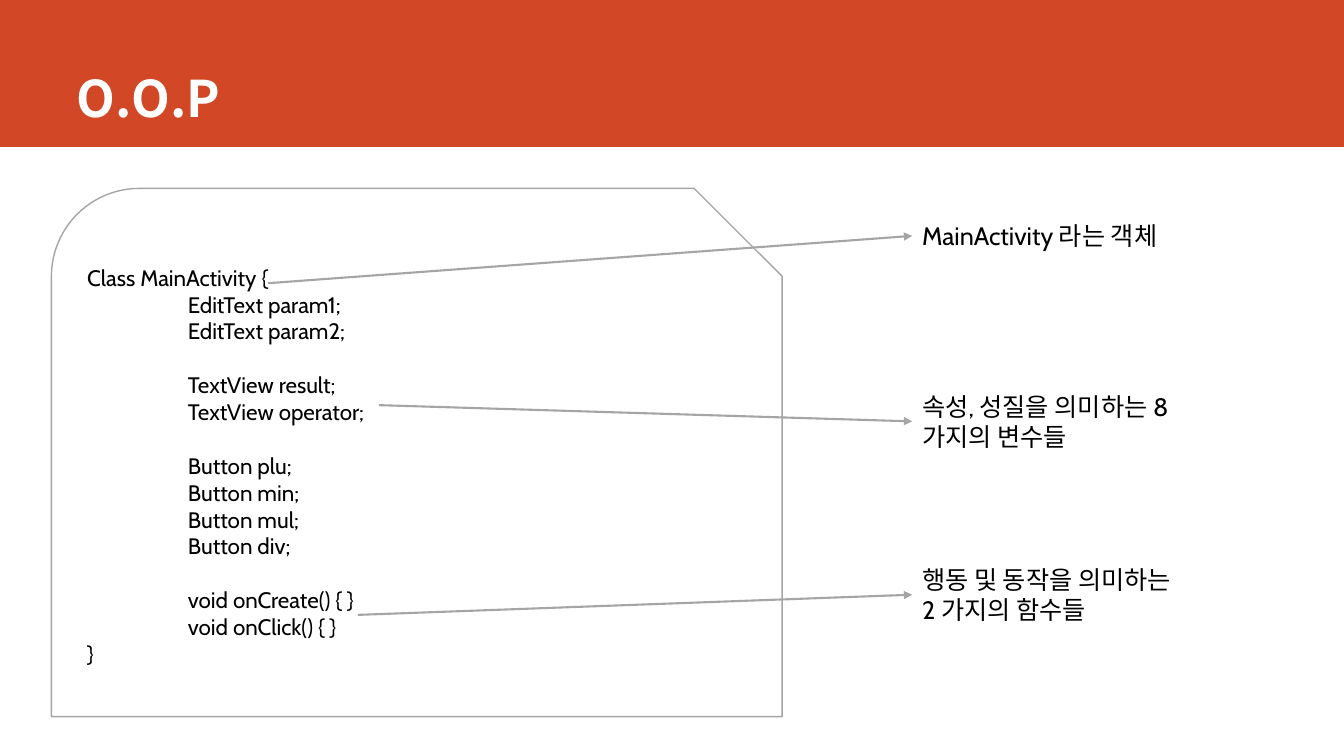
from dataclasses import dataclass

from pptx import Presentation
from pptx.dml.color import RGBColor
from pptx.enum.shapes import MSO_CONNECTOR as CONN, MSO_SHAPE as SHAPE
from pptx.enum.text import MSO_ANCHOR as ANCHOR, MSO_AUTO_SIZE as AUTO, PP_ALIGN as ALIGN
from pptx.oxml.ns import qn
from pptx.util import Pt


@dataclass(frozen=True)
class Theme:
    accent: RGBColor = RGBColor(0xD2, 0x47, 0x26)
    paper: RGBColor = RGBColor(0xFF, 0xFF, 0xFF)
    ink: RGBColor = RGBColor(0, 0, 0)
    rule: RGBColor = RGBColor(0xA5, 0xA5, 0xA5)
    latin: str = "Cabin"
    korean: str = "Noto Sans CJK KR"
    title_size: int = 36
    code_size: int = 16
    note_size: int = 18


class SlideBuilder:
    def __init__(self, slide, theme):
        self.s = slide
        self.theme = theme

    def style(self, p, size, color, latin, bold=False):
        p.alignment = ALIGN.LEFT
        for r in p.runs:
            r.font.size = Pt(size)
            r.font.bold = bold
            r.font.name = latin
            r.font.color.rgb = color
            ea = r._r.get_or_add_rPr().makeelement(qn("a:ea"), {"typeface": self.theme.korean})
            r.font._element.find(qn("a:latin")).addnext(ea)

    def shape(self, kind, x, y, w, h, fill, line=None):
        sp = self.s.shapes.add_shape(kind, Pt(x), Pt(y), Pt(w), Pt(h))
        sp.shadow.inherit = False
        sp.fill.solid()
        sp.fill.fore_color.rgb = fill
        if line is None:
            sp.line.fill.background()
        else:
            sp.line.color.rgb = line
            sp.line.width = Pt(1)
        return sp

    def title(self, text, x, y, w, h, band_height):
        t = self.theme
        band = self.shape(SHAPE.RECTANGLE, 0, 0, 960, band_height, t.accent)
        sp = self.s.shapes.title
        sp._element.addprevious(band._element)
        sp.left, sp.top, sp.width, sp.height = Pt(x), Pt(y), Pt(w), Pt(h)
        tf = sp.text_frame
        tf.text = text
        tf.vertical_anchor = ANCHOR.BOTTOM
        self.style(tf.paragraphs[0], t.title_size, t.paper, t.korean, bold=True)

    def code_card(self, head, groups, foot, x, y, w, h):
        t = self.theme
        sp = self.shape(SHAPE.SNIP_ROUND_RECTANGLE, x, y, w, h, t.paper, t.rule)
        tf = sp.text_frame
        tf.word_wrap = True
        tf.vertical_anchor = ANCHOR.MIDDLE
        tf.text = "\n".join([head, *(line for group in groups for line in group), foot])
        for p in tf.paragraphs:
            self.style(p, t.code_size, t.ink, t.latin)
        for p in tf.paragraphs[1:-1]:
            p._p.get_or_add_pPr().set("marL", str(Pt(72)))
        start = 1
        for group in groups[:-1]:
            start += len(group)
            tf.paragraphs[start].space_before = Pt(1.2 * t.code_size)

    def note(self, text, x, y, w, h):
        t = self.theme
        tf = self.s.shapes.add_textbox(Pt(x), Pt(y), Pt(w), Pt(h)).text_frame
        tf.word_wrap = True
        tf.auto_size = AUTO.SHAPE_TO_FIT_TEXT
        tf.text = text
        for p in tf.paragraphs:
            self.style(p, t.note_size, t.ink, t.latin)

    def arrow(self, x1, y1, x2, y2):
        c = self.s.shapes.add_connector(CONN.STRAIGHT, Pt(x1), Pt(y1), Pt(x2), Pt(y2))
        c.line.color.rgb = self.theme.rule
        c.line.width = Pt(1.5)
        ln = c.line._get_or_add_ln()
        ln.append(ln.makeelement(qn("a:tailEnd"), {"type": "triangle"}))
        sp_pr = c._element.spPr
        sp_pr.append(sp_pr.makeelement(qn("a:effectLst"), {}))


FIELDS = [
    ["EditText param1;", "EditText param2;"],
    ["TextView result;", "TextView operator;"],
    ["Button plu;", "Button min;", "Button mul;", "Button div;"],
    ["void onCreate() { }", "void onClick() { }"],
]
NOTE_X = 651.6
NOTES = [
    ("MainActivity 라는 객체", 154.1, 187.2, 28.8, (191.5, 202.3), 168.5),
    ("속성, 성질을 의미하는 8가지의 변수들", 275.8, 223.9, 51.1, (270.7, 289.4), 301),
    ("행동 및 동작을 의미하는\n2 가지의 함수들", 399.6, 275, 51.1, (255.6, 439.2), 424.8),
]

prs = Presentation()
prs.slide_width, prs.slide_height = Pt(960), Pt(540)
b = SlideBuilder(prs.slides.add_slide(prs.slide_layouts[5]), Theme())
b.title("O.O.P", 47.5, 0, 846.7, 95, band_height=105)
b.code_card("Class MainActivity {", FIELDS, "}", 36.7, 134.6, 522, 377.3)
for text, y, w, h, source, target_y in NOTES:
    b.note(text, NOTE_X, y, w, h)
    b.arrow(*source, NOTE_X, target_y)
prs.save("out.pptx")
